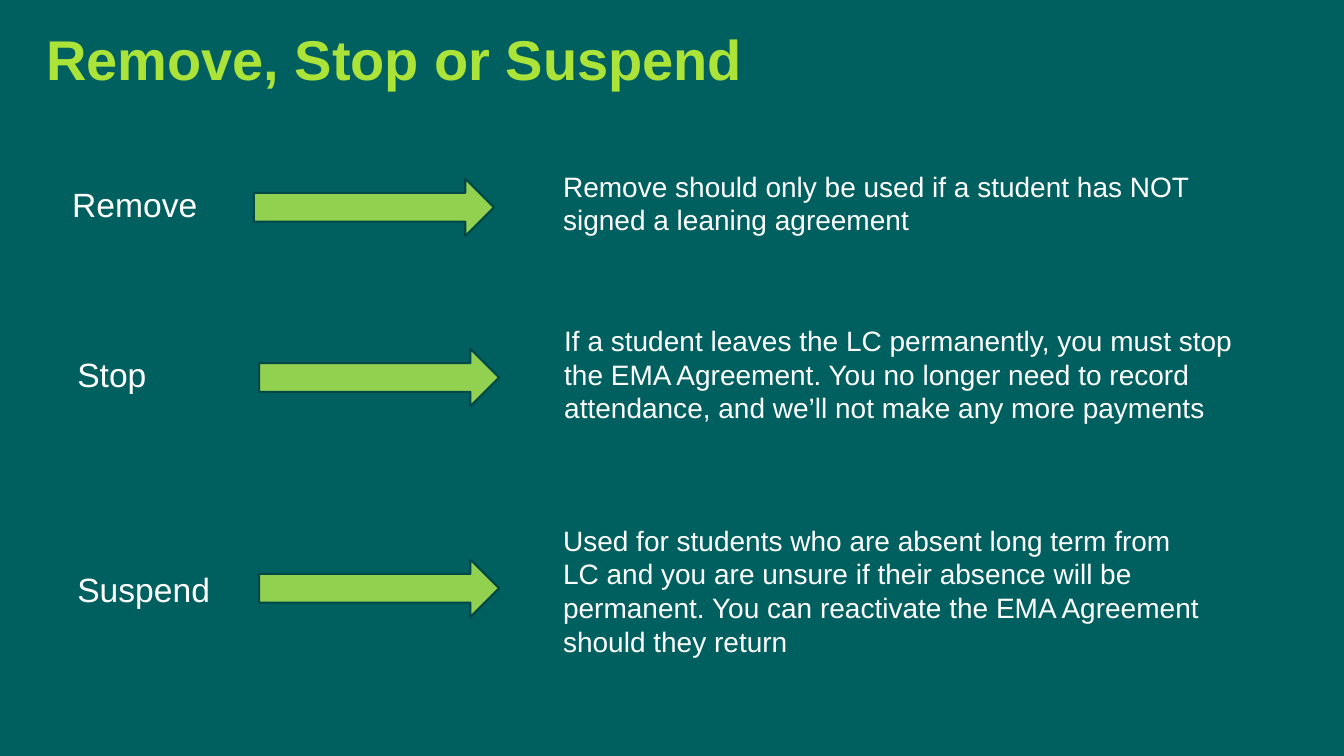
import pptx
import pptx.dml.color
import pptx.enum.shapes
import pptx.enum.text
import pptx.util

Cm = pptx.util.Cm
Pt = pptx.util.Pt
RGBColor = pptx.dml.color.RGBColor

TEAL = RGBColor(0x00, 0x60, 0x60)
DARK_TEAL = RGBColor(0x00, 0x47, 0x47)
LIME = RGBColor(0xAB, 0xE3, 0x38)
GREEN = RGBColor(0x92, 0xD0, 0x50)
WHITE = RGBColor(0xFF, 0xFF, 0xFF)


class SlideBuilder:
    font_name = "Arial"

    def __init__(self, deck):
        self.slide = deck.slides.add_slide(deck.slide_layouts[5])
        background = self.slide.background.fill
        background.solid()
        background.fore_color.rgb = TEAL

    def style(self, paragraph, size, color, bold=False):
        paragraph.alignment = pptx.enum.text.PP_ALIGN.LEFT
        paragraph.font.name = self.font_name
        paragraph.font.size = Pt(size)
        paragraph.font.bold = bold
        paragraph.font.color.rgb = color

    def title(self, wording, left, top, width, height):
        heading = self.slide.shapes.title
        heading.left, heading.top = Cm(left), Cm(top)
        heading.width, heading.height = Cm(width), Cm(height)
        frame = heading.text_frame
        frame.text = wording
        frame.auto_size = pptx.enum.text.MSO_AUTO_SIZE.NONE
        frame.vertical_anchor = pptx.enum.text.MSO_ANCHOR.MIDDLE
        frame.paragraphs[0].line_spacing = 0.9
        self.style(frame.paragraphs[0], 40, LIME, bold=True)

    def text(self, wording, left, top, width, height, size):
        box = self.slide.shapes.add_textbox(Cm(left), Cm(top), Cm(width), Cm(height))
        frame = box.text_frame
        frame.word_wrap = True
        frame.text = wording
        for paragraph in frame.paragraphs:
            self.style(paragraph, size, WHITE)

    def arrow(self, left, top):
        arrow = self.slide.shapes.add_shape(
            pptx.enum.shapes.MSO_SHAPE.RIGHT_ARROW, Cm(left), Cm(top), Cm(6.05), Cm(1.45))
        arrow.shadow.inherit = False
        arrow.fill.solid()
        arrow.fill.fore_color.rgb = GREEN
        arrow.line.color.rgb = DARK_TEAL
        arrow.line.width = Pt(1.5)


ACTIONS = [
    ("Remove", 1.57, 4.5, 4.5,
     "Remove should only be used if a student has NOT signed a leaning agreement",
     (13.94, 4.14, 16.66, 1.96)),
    ("Stop", 1.7, 8.79, 8.79,
     "If a student leaves the LC permanently, you must stop the EMA Agreement. "
     "You no longer need to record attendance, and we’ll not make any more payments",
     (13.97, 8.03, 17.55, 2.82)),
    ("Suspend", 1.7, 14.2, 14.1,
     "Used for students who are absent long term from\n"
     "LC and you are unsure if their absence will be permanent. "
     "You can reactivate the EMA Agreement should they return",
     (13.94, 13.06, 16.97, 3.68)),
]
ARROW_OFFSET = 4.83


def main():
    deck = pptx.Presentation()
    deck.slide_width, deck.slide_height = Cm(33.87), Cm(19.05)
    builder = SlideBuilder(deck)
    builder.title("Remove, Stop or Suspend", 0.91, 0.66, 19.51, 1.8)
    for action, left, label_top, arrow_top, explanation, explanation_area in ACTIONS:
        builder.text(action, left, label_top, 4.72, 1.27, size=24)
        builder.arrow(left + ARROW_OFFSET, arrow_top)
        builder.text(explanation, *explanation_area, size=20)
    deck.save("out.pptx")


if __name__ == "__main__":
    main()
